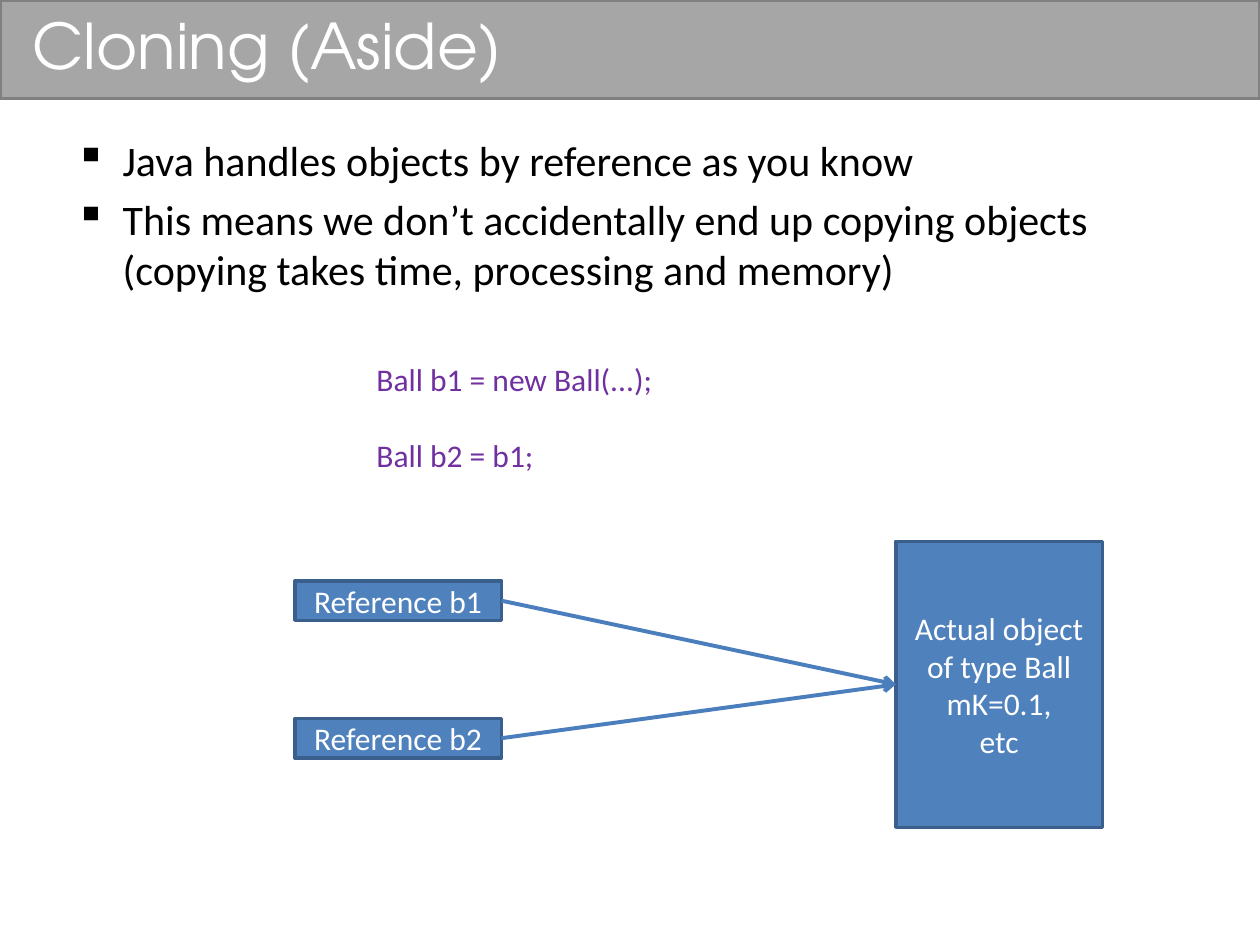
from dataclasses import dataclass

from lxml.etree import SubElement
from pptx import Presentation
from pptx.dml.color import RGBColor
from pptx.enum.shapes import MSO_CONNECTOR, MSO_SHAPE
from pptx.enum.text import MSO_ANCHOR, MSO_AUTO_SIZE, PP_ALIGN
from pptx.oxml.ns import qn
from pptx.util import Pt


@dataclass(frozen=True)
class Theme:
    title_font: str = "TeX Gyre Adventor"
    body_font: str = "Calibri"
    title_size: int = 36
    body_size: int = 24
    label_size: int = 18
    white: str = "FFFFFF"
    black: str = "000000"
    banner_fill: str = "A6A6A6"
    banner_line: str = "808080"
    code: str = "7030A0"
    box_fill: str = "4F81BD"
    box_line: str = "3A5F8C"
    arrow: str = "4B7EBC"


THEME = Theme()
LEFT_SITE, RIGHT_SITE = 1, 3  # connection sites of a rectangle


def color(value):
    return RGBColor.from_string(value)


def write_paragraphs(frame, lines, size, text_color, font=THEME.body_font, align=PP_ALIGN.LEFT):
    frame.text = "\n".join(lines)
    for paragraph in frame.paragraphs:
        paragraph.alignment = align
        paragraph.font.name = font
        paragraph.font.size = Pt(size)
        paragraph.font.color.rgb = color(text_color)


def add_rectangle(slide, left, top, width, height, fill, line):
    shape = slide.shapes.add_shape(
        MSO_SHAPE.RECTANGLE, Pt(left), Pt(top), Pt(width), Pt(height))
    shape.shadow.inherit = False
    shape.fill.solid()
    shape.fill.fore_color.rgb = color(fill)
    shape.line.color.rgb = color(line)
    shape.line.width = Pt(2)
    return shape


def add_banner_title(slide, text):
    banner = add_rectangle(slide, 0, 0, 720, 56.2, THEME.banner_fill, THEME.banner_line)
    title = slide.shapes.title
    title.element.addprevious(banner.element)  # the banner lies behind the title
    title.left, title.top, title.width, title.height = Pt(11.5), Pt(0), Pt(686), Pt(50.4)
    frame = title.text_frame
    frame.auto_size = MSO_AUTO_SIZE.NONE
    frame.vertical_anchor = MSO_ANCHOR.MIDDLE
    write_paragraphs(frame, [text], THEME.title_size, THEME.white, THEME.title_font)


def add_text(slide, left, top, width, height, lines, size, text_color, wrap=True):
    box = slide.shapes.add_textbox(Pt(left), Pt(top), Pt(width), Pt(height))
    frame = box.text_frame
    frame.word_wrap = wrap
    write_paragraphs(frame, lines, size, text_color)
    return frame


def add_bullets(slide, lines):
    frame = add_text(slide, 36, 73.4, 648, 433.4, lines, THEME.body_size, THEME.black)
    for paragraph in frame.paragraphs:
        paragraph.space_before = Pt(0.2 * THEME.body_size)
        properties = paragraph._p.get_or_add_pPr()
        properties.set("marL", str(Pt(27)))
        properties.set("indent", str(-Pt(27)))
        SubElement(properties, qn("a:buChar"), char="▪")


def add_code(slide, lines):
    frame = add_text(slide, 208, 202.3, 174.2, 72.7, lines,
                     THEME.label_size, THEME.code, wrap=False)
    for paragraph in frame.paragraphs[1:]:
        paragraph.space_before = Pt(21.5)


def add_box(slide, left, top, height, lines):
    box = add_rectangle(slide, left, top, 118.1, height, THEME.box_fill, THEME.box_line)
    frame = box.text_frame
    frame.vertical_anchor = MSO_ANCHOR.MIDDLE
    write_paragraphs(frame, lines, THEME.label_size, THEME.white, align=PP_ALIGN.CENTER)
    return box


def add_arrow(slide, source, target):
    arrow = slide.shapes.add_connector(MSO_CONNECTOR.STRAIGHT, 0, 0, 0, 0)
    arrow.begin_connect(source, RIGHT_SITE)
    arrow.end_connect(target, LEFT_SITE)
    arrow.line.color.rgb = color(THEME.arrow)
    arrow.line.width = Pt(2.25)
    SubElement(arrow.line._get_or_add_ln(), qn("a:tailEnd"), type="arrow")
    SubElement(arrow.element.spPr, qn("a:effectLst"))


def main():
    presentation = Presentation()
    presentation.slide_width, presentation.slide_height = Pt(720), Pt(540)
    slide = presentation.slides.add_slide(presentation.slide_layouts.get_by_name("Title Only"))

    add_banner_title(slide, "Cloning (Aside)")
    add_bullets(slide, [
        "Java handles objects by reference as you know",
        "This means we don’t accidentally end up copying objects "
        "(copying takes time, processing and memory)",
    ])
    add_code(slide, ["Ball b1 = new Ball(...);", "Ball b2 = b1;"])

    references = [add_box(slide, 168.5, top, 22.5, [f"Reference {name}"])
                  for name, top in (("b1", 332), ("b2", 410.6))]
    ball = add_box(slide, 511.9, 309.4, 163.4,
                   ["Actual object of type Ball", "mK=0.1,", "etc"])
    for reference in references:
        add_arrow(slide, reference, ball)

    presentation.save("out.pptx")


if __name__ == "__main__":
    main()
